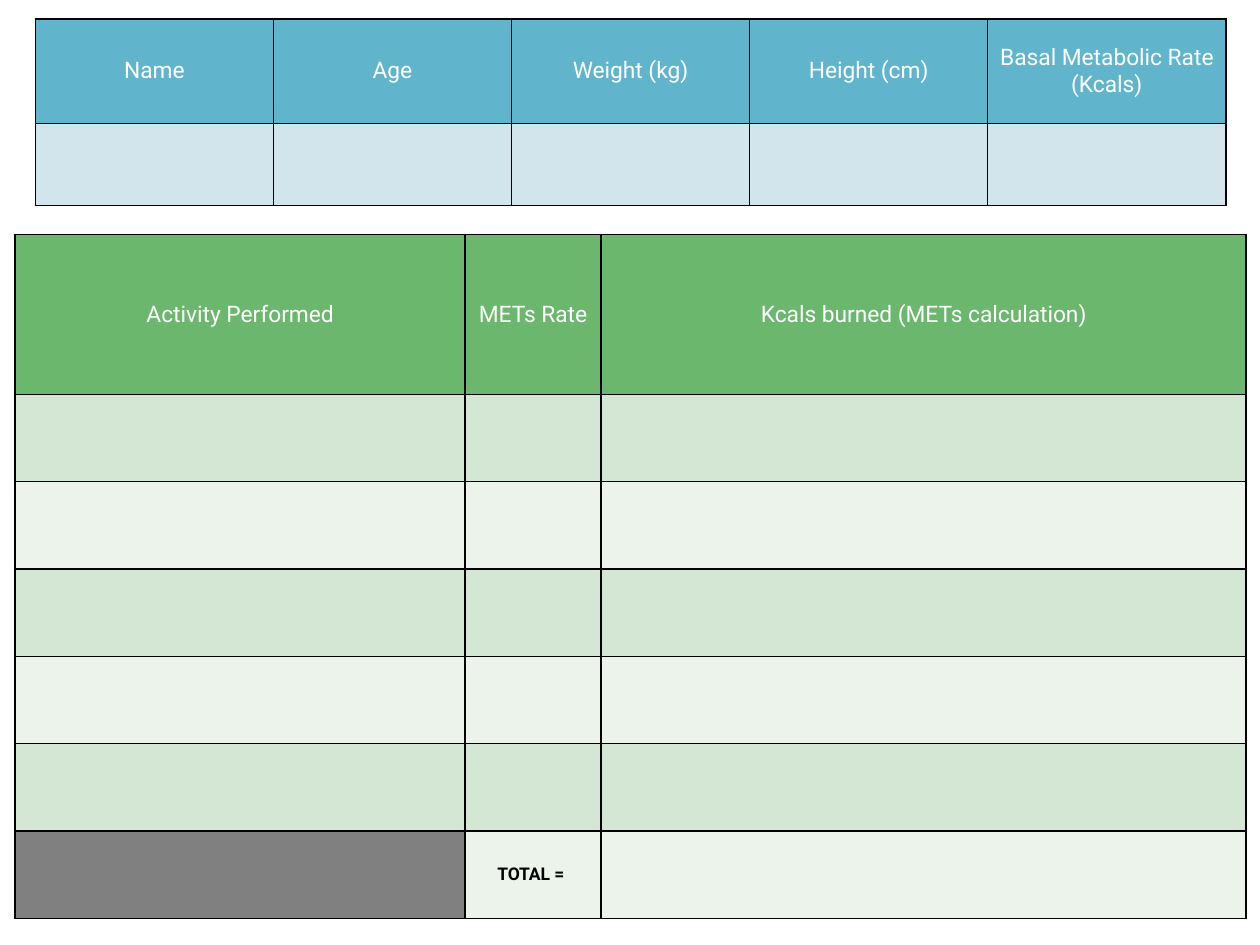
from dataclasses import dataclass
from lxml.etree import SubElement
from pptx import Presentation
from pptx.dml.color import RGBColor as Rgb
from pptx.enum.text import MSO_ANCHOR as Anchor, PP_ALIGN as Align
from pptx.oxml.ns import qn
from pptx.util import Inches, Pt


@dataclass(frozen=True)
class Theme:
    font: str = "Roboto"
    header_size: int = 13
    total_size: int = 10
    white: str = "FFFFFF"
    black: str = "000000"
    blue: str = "60B5CC"
    pale_blue: str = "D2E5EC"
    green: str = "6BB76D"
    bands: tuple = ("D4E6D4", "EBF3EB")
    gray: str = "808080"
    border: float = 1


THEME = Theme()

# Content
PERSON = {
    "headers": ["Name", "Age", "Weight (kg)", "Height (cm)", "Basal Metabolic Rate (Kcals)"],
    "at": (0.28, 0.15, 9.45, 1.48),
    "columns": [1.89] * 5,
    "header_height": 0.83,
    "body_rows": 1,
    "header_fill": THEME.blue,
    "bands": (THEME.pale_blue,),
}
ACTIVITY = {
    "headers": ["Activity Performed", "METs Rate", "Kcals burned (METs calculation)"],
    "at": (0.12, 1.86, 9.76, 5.43),
    "columns": [3.57, 1.08, 5.12],
    "header_height": 1.27,
    "body_rows": 6,
    "header_fill": THEME.green,
    "bands": THEME.bands,
}
TOTAL_LABEL = "TOTAL = "


def fill_cell(cell, color):
    cell.fill.solid()
    cell.fill.fore_color.rgb = Rgb.from_string(color)


def add_borders(cell):
    properties = cell._tc.get_or_add_tcPr()
    for index, side in enumerate(("a:lnL", "a:lnR", "a:lnT", "a:lnB")):
        line = SubElement(properties, qn(side), w=str(Pt(THEME.border)))
        solid = SubElement(line, qn("a:solidFill"))
        SubElement(solid, qn("a:srgbClr"), val=THEME.black)
        properties.insert(index, line)  # borders come before the fill


def write_cell(cell, text, size, color, bold=False):
    para = cell.text_frame.paragraphs[0]
    para.alignment = Align.CENTER
    span = para.add_run()
    span.text = text
    span.font.name = THEME.font
    span.font.size = Pt(size)
    span.font.bold = bold
    span.font.color.rgb = Rgb.from_string(color)


def add_grid(page, content):
    headers, bands = content["headers"], content["bands"]
    body_rows, header_height = content["body_rows"], content["header_height"]
    frame = page.shapes.add_table(
        body_rows + 1, len(headers), *(Inches(length) for length in content["at"]))
    table = frame.table
    for column, width in zip(table.columns, content["columns"]):
        column.width = Inches(width)

    # Body rows share the height left under the header
    body_height = (content["at"][3] - header_height) / body_rows
    for index, row in enumerate(table.rows):
        row.height = Inches(body_height if index else header_height)
        color = bands[(index - 1) % len(bands)] if index else content["header_fill"]
        for cell in row.cells:
            cell.vertical_anchor = Anchor.MIDDLE
            cell.margin_left = cell.margin_right = Inches(0.07)
            cell.margin_top = cell.margin_bottom = Inches(0.04)
            fill_cell(cell, color)
            add_borders(cell)

    for cell, text in zip(table.rows[0].cells, headers):
        write_cell(cell, text, THEME.header_size, THEME.white)
    return table


def main():
    deck = Presentation()
    deck.slide_width, deck.slide_height = Inches(10), Inches(7.5)
    page = deck.slides.add_slide(deck.slide_layouts[6])

    # Personal data
    add_grid(page, PERSON)

    # Activity log with its total row
    activity = add_grid(page, ACTIVITY)
    last = ACTIVITY["body_rows"]
    fill_cell(activity.cell(last, 0), THEME.gray)
    write_cell(activity.cell(last, 1), TOTAL_LABEL, THEME.total_size, THEME.black, bold=True)

    deck.save("out.pptx")


if __name__ == "__main__":
    main()
